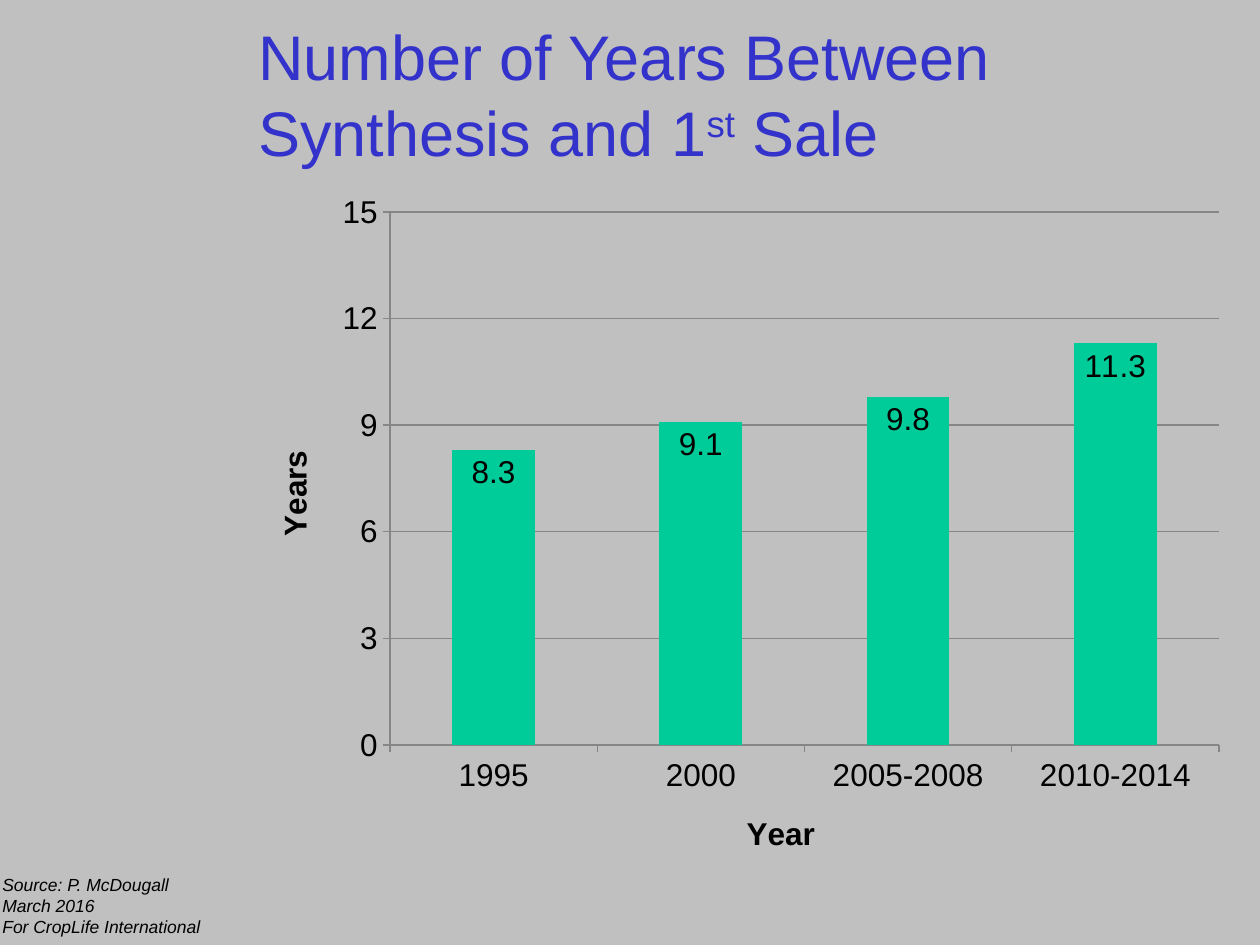
from dataclasses import dataclass

from lxml.etree import SubElement
from pptx import Presentation
from pptx.chart.data import CategoryChartData
from pptx.dml.color import RGBColor
from pptx.enum.chart import XL_CHART_TYPE, XL_LABEL_POSITION, XL_TICK_MARK
from pptx.enum.text import MSO_ANCHOR
from pptx.oxml.ns import qn
from pptx.util import Emu, Pt

PX_PER_INCH = 126


@dataclass(frozen=True)
class Theme:
    font: str = "Arial"
    background: RGBColor = RGBColor(0xC0, 0xC0, 0xC0)
    title: RGBColor = RGBColor(0x33, 0x33, 0xCC)
    text: RGBColor = RGBColor(0, 0, 0)
    bar: RGBColor = RGBColor(0, 0xCC, 0x99)
    grid: RGBColor = RGBColor(0x86, 0x86, 0x86)
    title_size: int = 36
    chart_size: int = 18
    source_size: int = 10


@dataclass(frozen=True)
class Box:
    left: int
    top: int
    width: int
    height: int

    def emu(self) -> tuple:
        return tuple(px(n) for n in (self.left, self.top, self.width, self.height))


@dataclass(frozen=True)
class YearBar:
    period: str
    years: float


THEME = Theme()
TITLE_BOX = Box(246, 14, 1004, 158)
CHART_BOX = Box(246, 180, 993, 702)
PLOT_BOX = Box(390, 212, 829, 533)
SOURCE_BOX = Box(-10, 868, 234, 77)
TITLE = [[("Number of Years Between Synthesis and 1", False), ("st", True), (" Sale", False)]]
SOURCE_LINES = ["Source: P. McDougall", "March 2016", "For CropLife International"]
BARS = [
    YearBar("1995", 8.3),
    YearBar("2000", 9.1),
    YearBar("2005-2008", 9.8),
    YearBar("2010-2014", 11.3),
]


def px(length: int) -> Emu:
    return Emu(round(length * 914400 / PX_PER_INCH))


def set_font(font, size: int, color: RGBColor, bold: bool = False, italic: bool = False) -> None:
    font.name = THEME.font
    font.size = Pt(size)
    font.color.rgb = color
    font.bold = bold
    font.italic = italic


def add_text(slide, box: Box, paragraphs: list, *, size: int, color: RGBColor,
             italic: bool = False, wrap: bool = True, anchor=MSO_ANCHOR.TOP) -> None:
    """Each paragraph is a list of (text, is_superscript) runs."""
    frame = slide.shapes.add_textbox(*box.emu()).text_frame
    frame.word_wrap = wrap
    frame.vertical_anchor = anchor
    for index, runs in enumerate(paragraphs):
        paragraph = frame.add_paragraph() if index else frame.paragraphs[0]
        for text, is_superscript in runs:
            run = paragraph.add_run()
            run.text = text
            set_font(run.font, size, color, italic=italic)
            if is_superscript:
                run.font._element.set("baseline", "30000")


def style_axis(axis, title: str) -> None:
    axis.major_tick_mark = XL_TICK_MARK.OUTSIDE
    axis.minor_tick_mark = XL_TICK_MARK.NONE
    axis.format.line.color.rgb = THEME.grid
    set_font(axis.tick_labels.font, THEME.chart_size, THEME.text)
    frame = axis.axis_title.text_frame
    frame.text = title
    set_font(frame.paragraphs[0].runs[0].font, THEME.chart_size, THEME.text, bold=True)


def fix_plot_area(chart, plot: Box, outer: Box) -> None:
    """Pin the inner plot area, as fractions of the chart."""
    plot_area = chart._chartSpace.chart.plotArea
    layout = plot_area.find(qn("c:layout"))
    if layout is None:
        layout = SubElement(plot_area, qn("c:layout"))
        plot_area.insert(0, layout)
    manual = SubElement(layout, qn("c:manualLayout"))
    settings = {
        "layoutTarget": "inner",
        "xMode": "edge",
        "yMode": "edge",
        "x": (plot.left - outer.left) / outer.width,
        "y": (plot.top - outer.top) / outer.height,
        "w": plot.width / outer.width,
        "h": plot.height / outer.height,
    }
    for name, value in settings.items():
        SubElement(manual, qn(f"c:{name}")).set("val", str(value))


def add_years_chart(slide, box: Box, bars: list[YearBar]) -> None:
    data = CategoryChartData(number_format="0.0")
    data.categories = [bar.period for bar in bars]
    data.add_series("Series 1", [bar.years for bar in bars])
    chart = slide.shapes.add_chart(XL_CHART_TYPE.COLUMN_CLUSTERED, *box.emu(), data).chart
    chart.has_legend = False
    chart.has_title = False
    set_font(chart.font, THEME.chart_size, THEME.text)

    style_axis(chart.category_axis, "Year")
    value_axis = chart.value_axis
    style_axis(value_axis, "Years")
    value_axis.minimum_scale = 0
    value_axis.maximum_scale = 15
    value_axis.major_unit = 3
    value_axis.tick_labels.number_format = "0"
    value_axis.tick_labels.number_format_is_linked = False
    value_axis.major_gridlines.format.line.color.rgb = THEME.grid

    plot = chart.plots[0]
    plot.gap_width = 150
    plot.vary_by_categories = False
    series = plot.series[0]
    series.format.fill.solid()
    series.format.fill.fore_color.rgb = THEME.bar
    labels = series.data_labels
    labels.show_value = True
    labels.position = XL_LABEL_POSITION.INSIDE_END
    set_font(labels.font, THEME.chart_size, THEME.text)
    fix_plot_area(chart, PLOT_BOX, box)


def main() -> None:
    presentation = Presentation()
    presentation.slide_width = px(1260)
    presentation.slide_height = px(945)
    slide = presentation.slides.add_slide(presentation.slide_layouts[6])
    slide.background.fill.solid()
    slide.background.fill.fore_color.rgb = THEME.background

    add_text(slide, TITLE_BOX, TITLE, size=THEME.title_size, color=THEME.title,
             anchor=MSO_ANCHOR.MIDDLE)
    add_years_chart(slide, CHART_BOX, BARS)
    add_text(slide, SOURCE_BOX, [[(line, False)] for line in SOURCE_LINES],
             size=THEME.source_size, color=THEME.text, italic=True, wrap=False)
    presentation.save("out.pptx")


if __name__ == "__main__":
    main()
